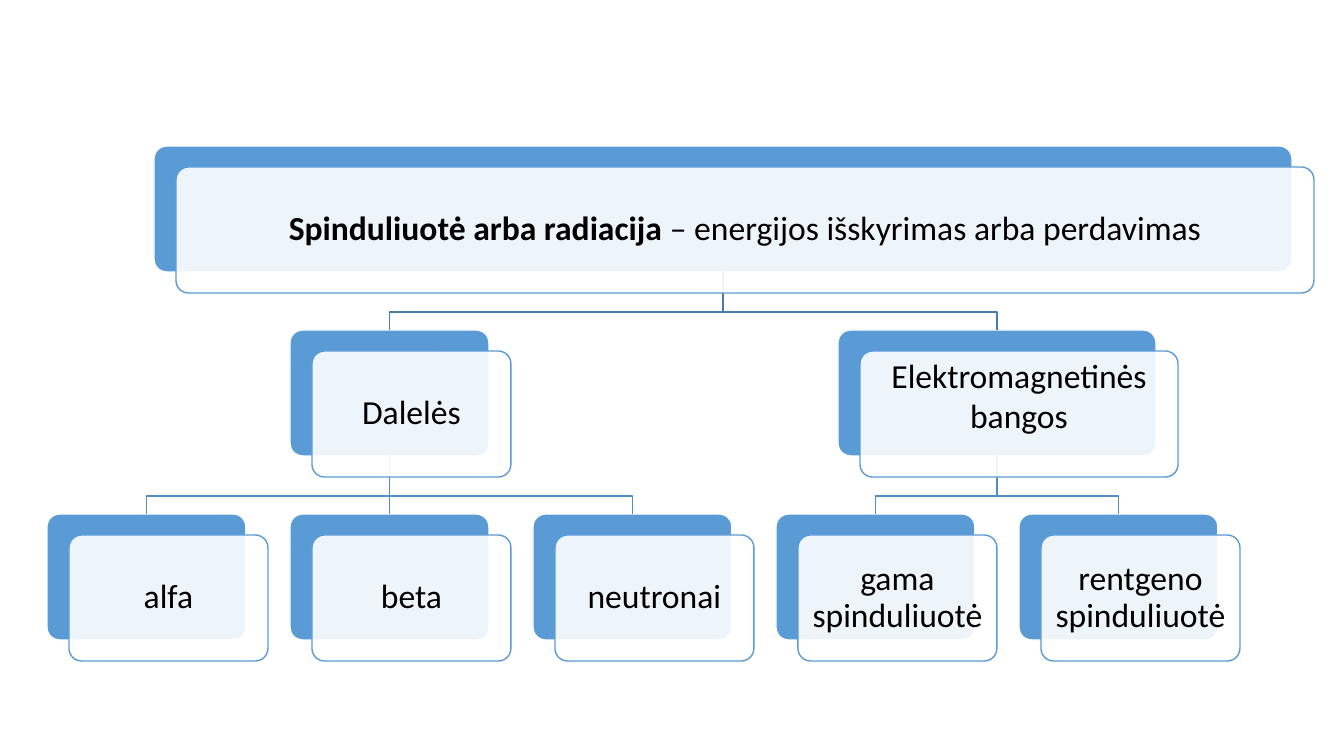
from lxml import etree
from pptx import Presentation
from pptx.dml.color import RGBColor
from pptx.enum.shapes import MSO_CONNECTOR as CONN, MSO_SHAPE as SHAPE
from pptx.enum.text import MSO_ANCHOR as ANCHOR, PP_ALIGN as ALIGN
from pptx.oxml.ns import qn
from pptx.util import Pt

# Content: text runs are (text, bold)
ROOT = [("Spinduliuotė arba radiacija ", True),
        ("– energijos išskyrimas arba perdavimas", False)]
BRANCHES = [
    ("Dalelės", 199, ["alfa", "beta", "neutronai"]),
    ("Elektromagnetinės bangos", 318, ["gama spinduliuotė", "rentgeno spinduliuotė"]),
]
TOP_ALIGNED = "Elektromagnetinės bangos"

# Layout in px
ROWS = [146, 330, 514]
LEAF_LEFT, LEAF_STEP, LEAF_W, BOX_H = 47, 243, 199, 126
ROOT_CENTER, ROOT_W = 723, 1138
CARD_DX, CARD_DY, ELBOW_DROP, INSET = 22, 21, 40, 9
BLUE, WHITE, BLACK = "5B9BD5", "FFFFFF", "000000"
LINK_COLORS = ["497CAB", "538DC1"]


def px(n):
    return round(n * 914400 / 100.8)


def rgb(color):
    return RGBColor.from_string(color)


def style_line(line, color):
    line.color.rgb = rgb(color)
    line.width = Pt(1)


def add_box(x, y, w, fill, line):
    sp = slide.shapes.add_shape(SHAPE.ROUNDED_RECTANGLE, px(x), px(y), px(w), px(BOX_H))
    sp.adjustments[0] = 0.1
    sp.shadow.inherit = False
    sp.fill.solid()
    sp.fill.fore_color.rgb = rgb(fill)
    style_line(sp.line, line)
    return sp


def add_card(node):
    """Translucent card with the label, offset from its blue box."""
    sp = add_box(node["x"] + CARD_DX, node["y"] + CARD_DY, node["w"], WHITE, BLUE)
    color = sp.fill._xPr.find(qn("a:solidFill"))[0]
    etree.SubElement(color, qn("a:alpha")).set("val", "90000")
    tf = sp.text_frame
    tf.word_wrap = True
    tf.vertical_anchor = ANCHOR.MIDDLE
    tf.margin_left = tf.margin_right = tf.margin_top = tf.margin_bottom = px(INSET)
    p = tf.paragraphs[0]
    p.alignment = ALIGN.CENTER
    p.line_spacing = 0.9
    for text, bold in node["runs"]:
        r = p.add_run()
        r.text = text
        r.font.bold = bold
    p.font.name, p.font.size = "Calibri", Pt(24)
    p.font.color.rgb = rgb(BLACK)
    if node["runs"][0][0] == TOP_ALIGNED:
        tf.vertical_anchor = ANCHOR.TOP
        tf.margin_top = 0
        p.line_spacing = 1.0


def add_link(parent, child):
    color = LINK_COLORS[parent["level"]]
    x1, y1 = parent["center"], parent["y"] + BOX_H
    x2, y2 = child["center"], child["y"]
    if x1 == x2:
        line = slide.shapes.add_connector(CONN.STRAIGHT, px(x1), px(y1), px(x2), px(y2))
        line.begin_connect(parent["box"], 2)
        line.end_connect(child["box"], 0)
        etree.SubElement(line._element.spPr, qn("a:effectLst"))
    else:
        elbow = y1 + ELBOW_DROP
        fb = slide.shapes.build_freeform(px(x1), px(y1))
        fb.add_line_segments([(px(x), px(y)) for x, y in
                              [(x1, elbow), (x2, elbow), (x2, y2)]], close=False)
        line = fb.convert_to_shape()
        line.fill.background()
        line.shadow.inherit = False
    style_line(line.line, color)


def make_node(runs, level, center, w):
    x, y = center - w / 2, ROWS[level]
    node = {"runs": runs, "level": level, "center": center, "x": x, "y": y, "w": w}
    node["box"] = add_box(x, y, w, BLUE, WHITE)
    nodes.append(node)
    return node


prs = Presentation()
prs.slide_width, prs.slide_height = px(1344), px(756)
slide = prs.slides.add_slide(prs.slide_layouts[6])

# Blue boxes; each branch is centred over its leaves
nodes, links = [], []
root = make_node(ROOT, 0, ROOT_CENTER, ROOT_W)
center = LEAF_LEFT + LEAF_W / 2
for label, width, leaves in BRANCHES:
    middle = center + LEAF_STEP * (len(leaves) - 1) / 2
    branch = make_node([(label, False)], 1, middle, width)
    links.append((root, branch))
    for leaf in leaves:
        links.append((branch, make_node([(leaf, False)], 2, center, LEAF_W)))
        center += LEAF_STEP

# Links, then the cards over them
for parent, child in links:
    add_link(parent, child)
for node in nodes:
    add_card(node)

prs.save("out.pptx")
